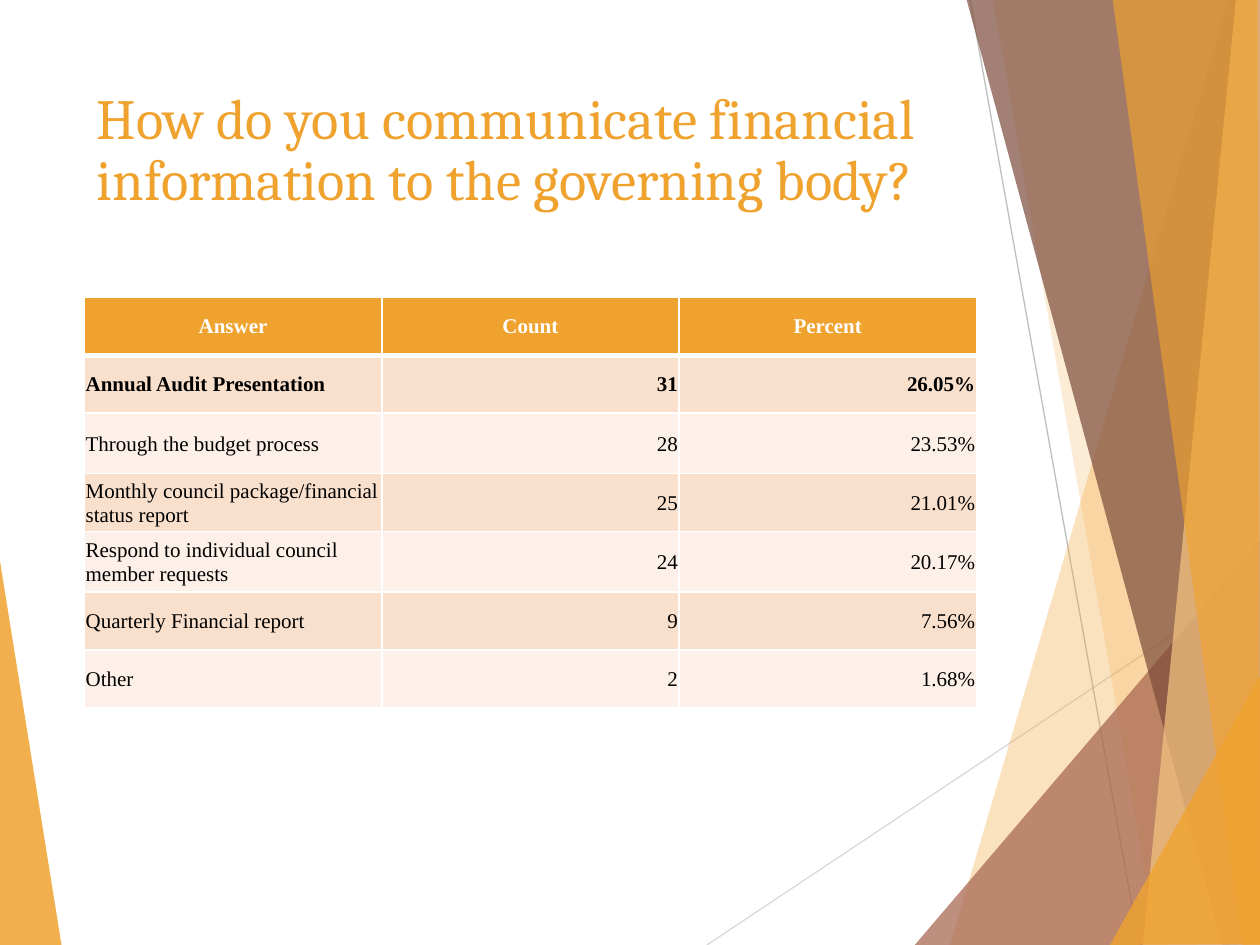
from dataclasses import dataclass

from lxml import etree
from pptx import Presentation
from pptx.dml.color import RGBColor
from pptx.enum.shapes import MSO_CONNECTOR
from pptx.enum.text import MSO_ANCHOR as ANCHOR, PP_ALIGN as ALIGN
from pptx.oxml.ns import qn
from pptx.util import Inches, Pt


@dataclass(frozen=True)
class Theme:
    amber: str = "F0A22E"
    sand: str = "F6C782"
    clay: str = "A5644E"
    brown: str = "7C4B3B"
    band_dark: str = "F9E0CD"
    band_light: str = "FCF0E8"
    white: str = "FFFFFF"
    black: str = "000000"
    line_light: str = "D9D9D9"
    line_dark: str = "BFBFBF"
    title_font: str = "Cambria"
    table_font: str = "Times New Roman"
    title_size: float = 32.4
    table_size: float = 12


THEME = Theme()

# Thin rays: start, end, colour
RAYS = [
    ((5.61, 7.5), (10.01, 4.57), THEME.line_light),
    ((7.7, 0), (9.04, 7.5), THEME.line_dark),
]

# Translucent facets, back to front: corners, colour, opacity in percent
LEFT_FACET = ([(-0.01, 4.39), (0.49, 7.51), (-0.01, 7.5)], THEME.amber, 85)
RIGHT_FACETS = [
    ([(9.75, 0), (7.54, 7.5), (10.02, 7.51), (10.01, 0.01)], THEME.amber, 30),
    ([(7.88, -0.01), (9.19, 7.5), (10.01, 7.5), (10.01, -0.01)], THEME.amber, 20),
    ([(7.26, 7.5), (10, 4.29), (10.01, 7.5)], THEME.clay, 72),
    ([(7.67, -0.01), (9.7, 7.5), (10.01, 7.49), (10.01, -0.01)], THEME.brown, 70),
    ([(9.81, -0.01), (9.07, 7.5), (10.01, 7.5), (10, -0.01)], THEME.sand, 70),
    ([(8.83, -0.01), (9.86, 7.5), (10, 7.5), (9.98, -0.01)], THEME.amber, 65),
    ([(8.81, 7.5), (10.01, 5.35), (10.01, 7.49)], THEME.amber, 80),
]

ROWS = [
    ("Answer", "Count", "Percent"),
    ("Annual Audit Presentation", "31", "26.05%"),
    ("Through the budget process", "28", "23.53%"),
    ("Monthly council package/financial status report", "25", "21.01%"),
    ("Respond to individual council member requests", "24", "20.17%"),
    ("Quarterly Financial report", "9", "7.56%"),
    ("Other", "2", "1.68%"),
]
ROW_HEIGHTS = [0.46, 0.46, 0.48, 0.46, 0.48, 0.46, 0.46]


def rgb(color):
    return RGBColor.from_string(color)


def write_text(tf, text, *, font, size, color, bold=False, align=ALIGN.LEFT, spacing=None):
    p = tf.paragraphs[0]
    p.alignment = align
    if spacing:
        p.line_spacing = spacing
    r = p.add_run()
    r.text = text
    r.font.name, r.font.size, r.font.bold = font, Pt(size), bold
    r.font.color.rgb = rgb(color)


def add_facet(s, corners, color, opacity):
    points = [(Inches(x), Inches(y)) for x, y in corners]
    builder = s.shapes.build_freeform(*points[0])
    builder.add_line_segments(points[1:], close=True)
    sp = builder.convert_to_shape()
    sp.shadow.inherit = False
    sp.line.fill.background()
    sp.fill.solid()
    sp.fill.fore_color.rgb = rgb(color)
    clr = sp.fill._xPr.find(qn("a:solidFill"))[0]
    etree.SubElement(clr, qn("a:alpha")).set("val", str(opacity * 1000))


def add_ray(s, start, end, color):
    ends = [Inches(v) for v in (*start, *end)]
    line = s.shapes.add_connector(MSO_CONNECTOR.STRAIGHT, *ends)
    line.line.color.rgb = rgb(color)
    line.line.width = Pt(0.75)
    etree.SubElement(line._element.spPr, qn("a:effectLst"))


def add_title(s, text):
    box = s.shapes.add_textbox(Inches(0.67), Inches(0.67), Inches(6.94), Inches(1.44))
    tf = box.text_frame
    tf.word_wrap = True
    tf.vertical_anchor = ANCHOR.TOP
    write_text(tf, text, font=THEME.title_font, size=THEME.title_size,
               color=THEME.amber, spacing=0.9)


def set_borders(cell, **widths):
    tc_pr = cell._tc.get_or_add_tcPr()
    for side in "LRTB":
        ln = etree.SubElement(tc_pr, qn(f"a:ln{side}"), w=str(Pt(widths.get(side, 1))))
        fill = etree.SubElement(ln, qn("a:solidFill"))
        etree.SubElement(fill, qn("a:srgbClr"), val=THEME.white)


def format_cell(cell, text, row, col):
    header = row == 0
    cell.margin_left = cell.margin_right = cell.margin_top = Inches(0.01)
    cell.margin_bottom = 0
    cell.vertical_anchor = ANCHOR.MIDDLE
    # A heavier rule separates the header from the answers
    set_borders(cell, B=3 if header else 1, T=3 if row == 1 else 1)
    band = THEME.band_dark if row % 2 else THEME.band_light
    cell.fill.solid()
    cell.fill.fore_color.rgb = rgb(THEME.amber if header else band)
    align = ALIGN.CENTER if header else ALIGN.RIGHT if col else ALIGN.LEFT
    write_text(cell.text_frame, text, font=THEME.table_font, size=THEME.table_size,
               color=THEME.white if header else THEME.black, bold=row < 2, align=align)


def add_answer_table(s):
    frame = s.shapes.add_table(len(ROWS), len(ROWS[0]), Inches(0.67), Inches(2.36),
                               Inches(7.08), Inches(sum(ROW_HEIGHTS)))
    table = frame.table
    for row, (values, height) in enumerate(zip(ROWS, ROW_HEIGHTS)):
        table.rows[row].height = Inches(height)
        for col, text in enumerate(values):
            format_cell(table.cell(row, col), text, row, col)


def main():
    prs = Presentation()
    prs.slide_width, prs.slide_height = Inches(10), Inches(7.5)
    s = prs.slides.add_slide(prs.slide_layouts[6])

    # Background decoration
    add_facet(s, *LEFT_FACET)
    for ray in RAYS:
        add_ray(s, *ray)
    for facet in RIGHT_FACETS:
        add_facet(s, *facet)

    # Content
    add_title(s, "How do you communicate financial information to the governing body?")
    add_answer_table(s)

    prs.save("out.pptx")


if __name__ == "__main__":
    main()
